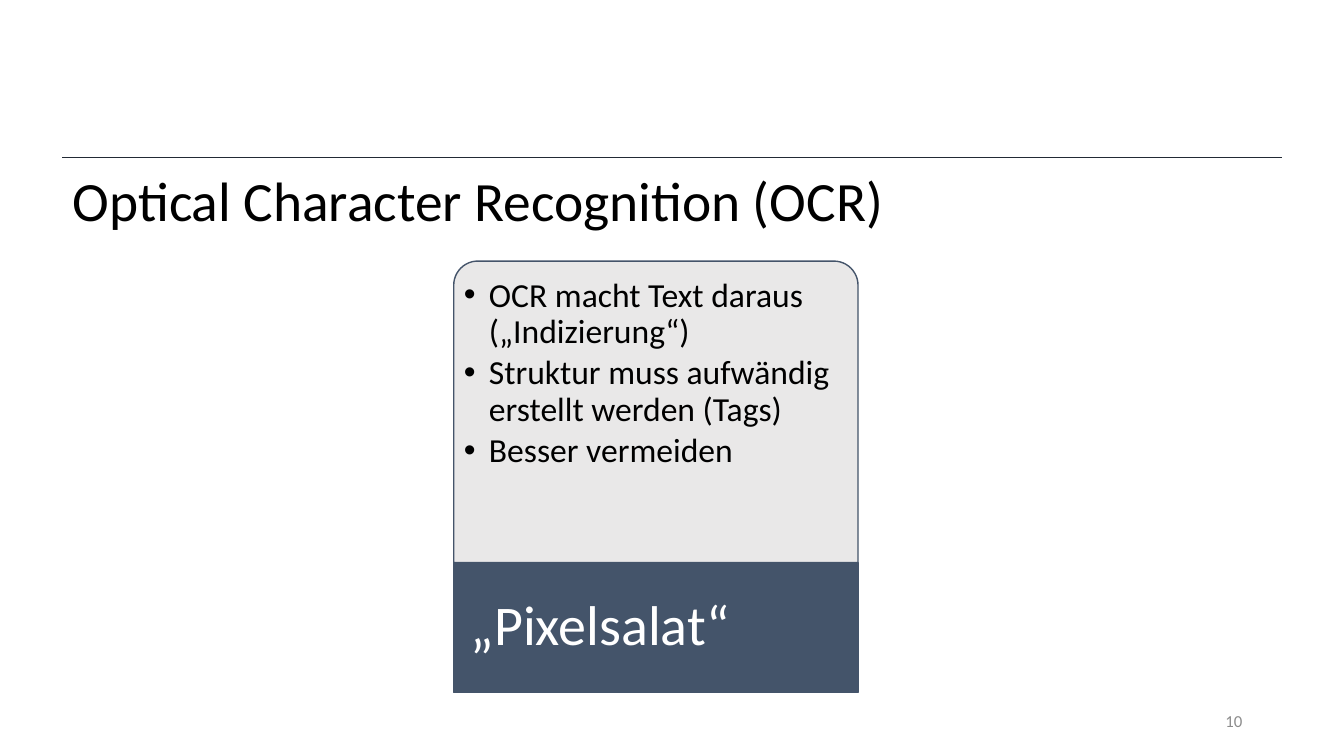
from lxml import etree
from pptx import Presentation
from pptx import util as u
from pptx.dml import color
from pptx.enum import shapes, text
from pptx.oxml import ns

FONT = "Calibri"
SLATE = "44546A"
CARD_LEFT, CARD_WIDTH = 4.5, 4.01
CARD_TOP, CARD_HEIGHT = 2.59, 2.99
BAND_TOP, BAND_HEIGHT = CARD_TOP + CARD_HEIGHT, 1.29


def rgb(value):
    return color.RGBColor.from_string(value)


def inches(*lengths):
    return [u.Inches(length) for length in lengths]


def add_bullet(para, indent):
    props = para._p.get_or_add_pPr()
    props.set("marL", str(u.Inches(indent)))
    props.set("indent", str(-u.Inches(indent)))
    etree.SubElement(props, ns.qn("a:buFont")).set("typeface", "Arial")
    etree.SubElement(props, ns.qn("a:buChar")).set("char", "•")


def write(frame, lines, size, hue, anchor=text.MSO_ANCHOR.MIDDLE,
          align=text.PP_ALIGN.LEFT, margins=(0.1, 0.05, 0.1, 0.05),
          spacing=0.9, after=0, bullets=False):
    frame.word_wrap = True
    frame.auto_size = text.MSO_AUTO_SIZE.NONE
    frame.vertical_anchor = anchor
    (frame.margin_left, frame.margin_top,
     frame.margin_right, frame.margin_bottom) = inches(*margins)
    for index, line in enumerate(lines):
        para = frame.add_paragraph() if index else frame.paragraphs[0]
        if bullets:
            add_bullet(para, 0.25)
        para.alignment = align
        para.line_spacing = spacing
        para.space_before = u.Pt(0)
        para.space_after = u.Pt(after)
        span = para.add_run()
        span.text = line
        span.font.name = FONT
        span.font.size = u.Pt(size)
        span.font.color.rgb = rgb(hue)


def add_text(page, place, lines, size, hue, **style):
    box = page.shapes.add_textbox(*inches(*place))
    write(box.text_frame, lines, size, hue, **style)


def add_panel(page, kind, place, fill, opacity=100):
    panel = page.shapes.add_shape(kind, *inches(*place))
    panel.shadow.inherit = False
    panel.fill.solid()
    panel.fill.fore_color.rgb = rgb(fill)
    panel.line.color.rgb = rgb(SLATE)
    panel.line.width = u.Pt(1)
    if opacity < 100:
        tone = panel._element.spPr.find(ns.qn("a:solidFill"))[0]
        etree.SubElement(tone, ns.qn("a:alpha")).set("val", str(opacity * 1000))
    return panel


def add_rule(page, left, right, top):
    rule = page.shapes.add_connector(
        shapes.MSO_CONNECTOR.STRAIGHT, *inches(left, top, right, top))
    rule.line.color.rgb = rgb("222A35")
    rule.line.width = u.Pt(0.5)
    etree.SubElement(rule._element.spPr, ns.qn("a:effectLst"))


def set_title(page, place, words):
    title = page.shapes.title
    title.left, title.top, title.width, title.height = inches(*place)
    write(title.text_frame, [words], 39.6, "000000")


def main():
    deck = Presentation()
    deck.slide_width, deck.slide_height = inches(13.33, 7.5)
    page = deck.slides.add_slide(deck.slide_layouts[5])

    add_rule(page, 0.62, 12.72, 1.56)
    set_title(page, (0.62, 1.67, 12.1, 0.7), "Optical Character Recognition (OCR)")

    card = add_panel(page, shapes.MSO_SHAPE.ROUND_2_SAME_RECTANGLE,
                     (CARD_LEFT, CARD_TOP, CARD_WIDTH, CARD_HEIGHT), "E7E6E6", 90)
    card.adjustments[0] = 0.08
    card.adjustments[1] = 0
    add_text(page, (CARD_LEFT + 0.07, CARD_TOP + 0.07,
                    CARD_WIDTH - 0.14, CARD_HEIGHT - 0.07),
             ["OCR macht Text daraus („Indizierung“)",
              "Struktur muss aufwändig erstellt werden (Tags)",
              "Besser vermeiden"],
             24, "000000", anchor=text.MSO_ANCHOR.TOP,
             margins=(0.03, 0.1, 0.03, 0.03), after=3.6, bullets=True)

    add_panel(page, shapes.MSO_SHAPE.RECTANGLE,
              (CARD_LEFT, BAND_TOP, CARD_WIDTH, BAND_HEIGHT), SLATE)
    add_text(page, (CARD_LEFT, BAND_TOP, 2.82, BAND_HEIGHT), ["„Pixelsalat“"],
             40, "FFFFFF", margins=(0.17, 0, 0.06, 0))

    add_text(page, (9.42, 6.95, 3, 0.4), ["10"], 12, "8C8C8C",
             align=text.PP_ALIGN.RIGHT, spacing=1.0)

    deck.save("out.pptx")


if __name__ == "__main__":
    main()
